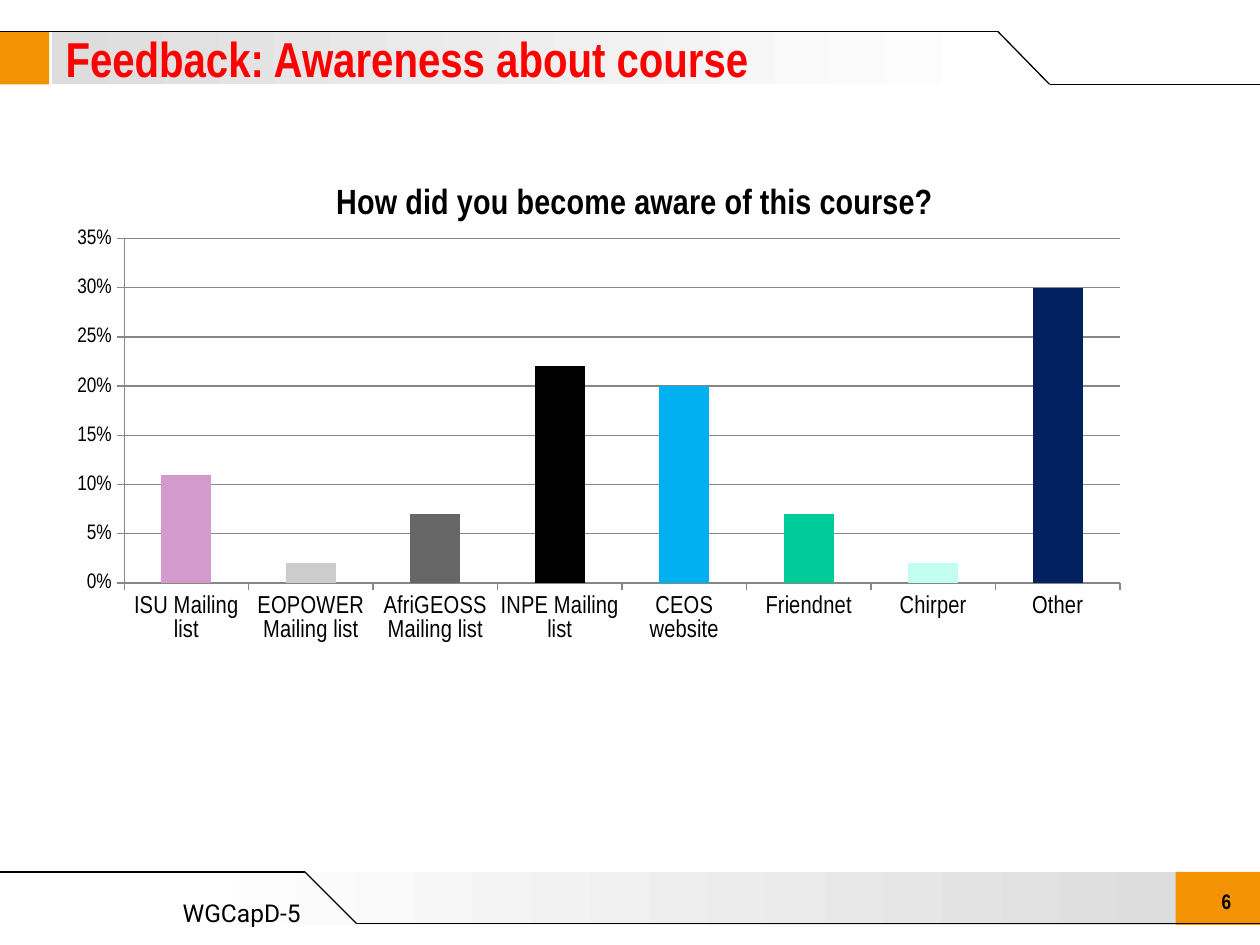
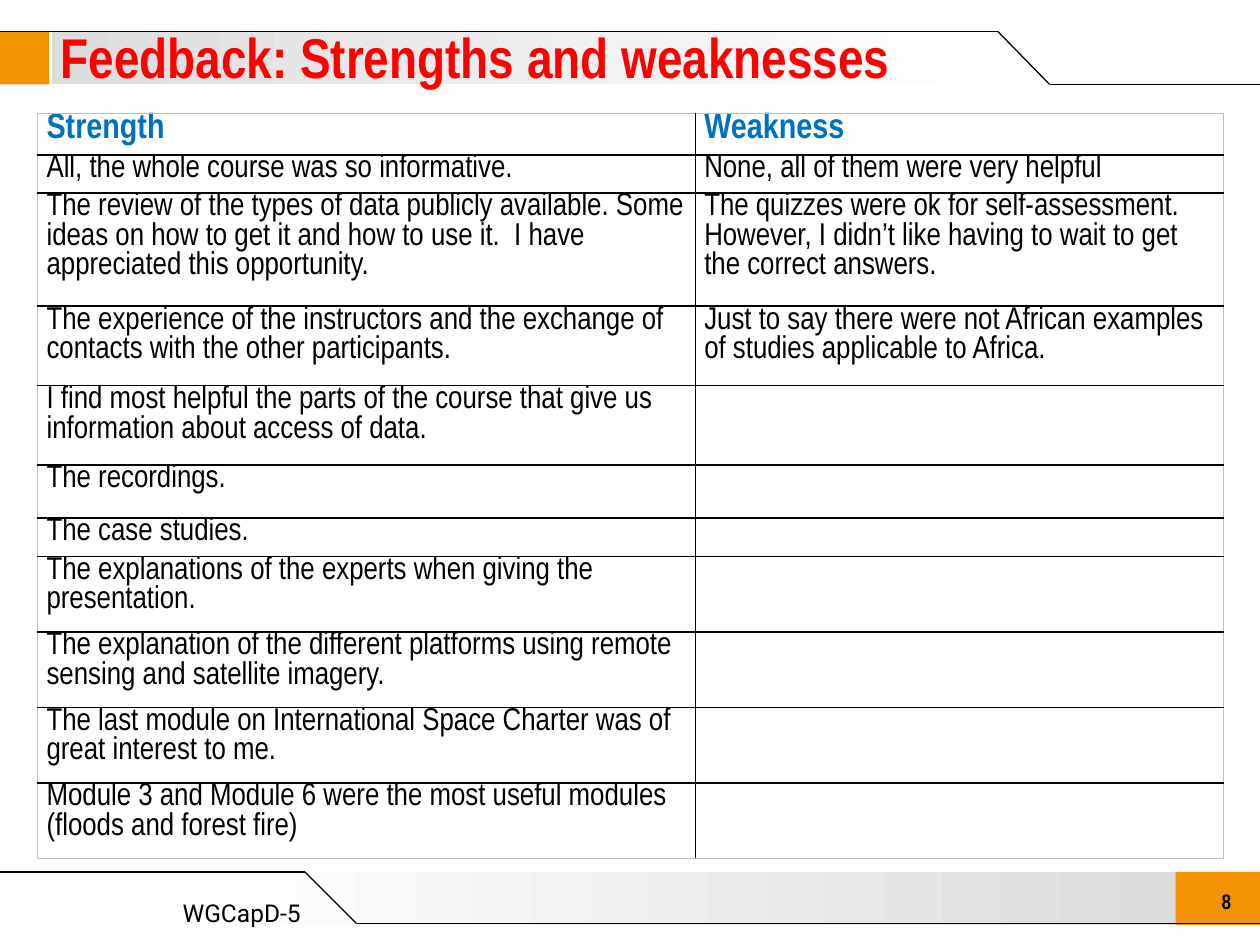
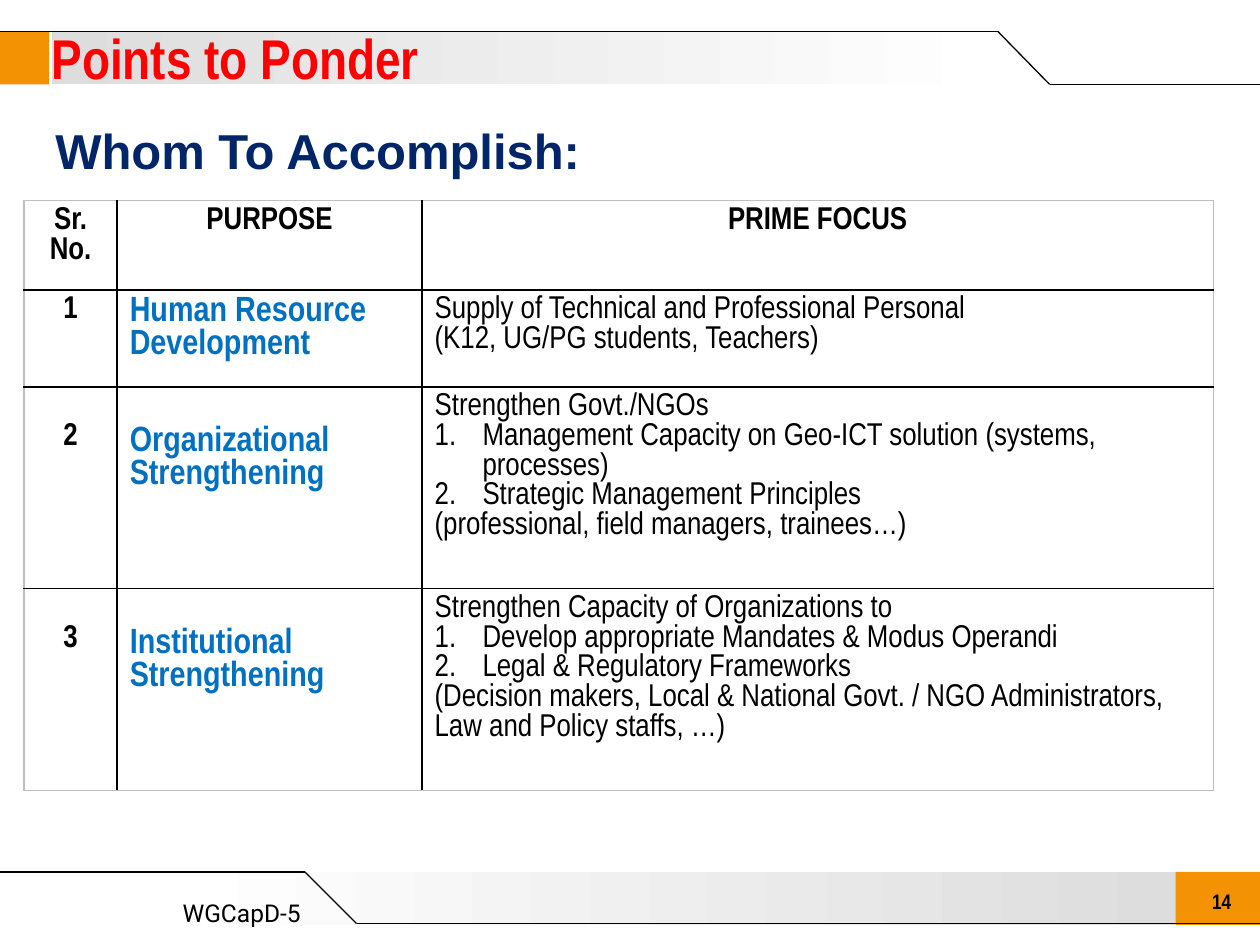
from pptx import Presentation
from pptx.chart.data import CategoryChartData
from pptx.dml.color import RGBColor
from pptx.enum.chart import XL_CHART_TYPE, XL_TICK_MARK
from pptx.enum.shapes import MSO_CONNECTOR, MSO_SHAPE
from pptx.enum.text import MSO_ANCHOR, MSO_AUTO_SIZE, PP_ALIGN
from pptx.oxml import parse_xml
from pptx.oxml.ns import nsdecls, qn
from pptx.oxml.xmlchemy import OxmlElement
from pptx.util import Inches, Pt

BLACK = RGBColor(0x00, 0x00, 0x00)
WHITE = RGBColor(0xFF, 0xFF, 0xFF)
SILVER = RGBColor(0xDD, 0xDD, 0xDD)
GRID_GRAY = RGBColor(0x87, 0x87, 0x87)
EDGE_GRAY = RGBColor(0xBF, 0xBF, 0xBF)
ORANGE = RGBColor(0xF3, 0x92, 0x03)
RED = RGBColor(0xFF, 0x00, 0x00)
BLUE = RGBColor(0x00, 0x70, 0xC0)
NAVY = RGBColor(0x00, 0x25, 0x69)
NARROW = "Arial Narrow"

WIDTH, HEIGHT = 10, 7.5
BAND_HEIGHT = 0.42
HEADER_TOP, HEADER_BOTTOM = 0.25, 0.67
FOOTER_TOP, FOOTER_BOTTOM = 6.92, 7.33


def write(frame, text, size=18, color=BLACK, bold=False, font=NARROW,
          align=PP_ALIGN.LEFT, anchor=MSO_ANCHOR.TOP, inset=0.05, numbered=()):
    frame.word_wrap = True
    frame.vertical_anchor = anchor
    frame.margin_left = frame.margin_right = Inches(inset)
    frame.margin_top = frame.margin_bottom = Inches(0.05)
    for index, line in enumerate(text.split("\n")):
        para = frame.add_paragraph() if index else frame.paragraphs[0]
        para.alignment = align
        if index in numbered:
            properties = para._p.get_or_add_pPr()
            properties.set("marL", str(Inches(0.38)))
            properties.set("indent", str(-Inches(0.38)))
            bullet = OxmlElement("a:buAutoNum")
            bullet.set("type", "arabicPeriod")
            properties.append(bullet)
        span = para.add_run()
        span.text = line
        span.font.name = font
        span.font.size = Pt(size)
        span.font.bold = bold
        span.font.color.rgb = color


def add_grid(page, left, top, columns, rows):
    table = page.shapes.add_table(
        len(rows), len(columns), Inches(left), Inches(top),
        Inches(sum(columns)), Inches(sum(rows))).table
    table.first_row = table.horz_banding = False
    for column, width in zip(table.columns, columns):
        column.width = Inches(width)
    for row, height in zip(table.rows, rows):
        row.height = Inches(height)
    for r in range(len(rows)):
        for c in range(len(columns)):
            cell = table.cell(r, c)
            cell.fill.background()
            cell.margin_top = cell.margin_bottom = 0
            sides = [("L", c == 0), ("R", c == len(columns) - 1),
                     ("T", r == 0), ("B", r == len(rows) - 1)]
            for position, (side, outer) in enumerate(sides):
                color, points = (EDGE_GRAY, 0.75) if outer else (BLACK, 1)
                cell._tc.get_or_add_tcPr().insert(position, parse_xml(
                    f'<a:ln{side} {nsdecls("a")} w="{Pt(points)}"><a:solidFill>'
                    f'<a:srgbClr val="{color}"/></a:solidFill></a:ln{side}>'))
    return table


deck = Presentation()
deck.slide_width, deck.slide_height = Inches(WIDTH), Inches(HEIGHT)

titles = [
    ("Feedback: Awareness about course", 28, 6, (0.47, 0.17, 7.47, 0.57)),
    ("Feedback: Strengths and weaknesses", 32, 8, (0.43, 0.12, 6.91, 0.64)),
    ("Points to Ponder", 32, 14, (0.36, 0.13, 6.32, 0.64)),
]
bands = [
    (1.42, FOOTER_TOP, 7.92, (WHITE, SILVER)),
    (9.33, FOOTER_TOP, 0.67, (ORANGE,)),
    (0.41, HEADER_TOP, 7.51, (SILVER, WHITE)),
    (0, HEADER_TOP, 0.39, (ORANGE,)),
]
outlines = [
    [(0, HEADER_TOP), (7.92, HEADER_TOP), (8.33, HEADER_BOTTOM), (WIDTH, HEADER_BOTTOM)],
    [(0, FOOTER_TOP), (2.42, FOOTER_TOP), (2.83, FOOTER_BOTTOM), (WIDTH, FOOTER_BOTTOM)],
]
pages = []
for title_text, title_size, number, title_place in titles:
    page = deck.slides.add_slide(deck.slide_layouts[5])
    pages.append(page)
    for left, top, width, colors in bands:
        band = page.shapes.add_shape(MSO_SHAPE.RECTANGLE, Inches(left), Inches(top),
                                     Inches(width), Inches(BAND_HEIGHT))
        band.shadow.inherit = False
        band.line.fill.background()
        if len(colors) == 1:
            band.fill.solid()
            band.fill.fore_color.rgb = colors[0]
        else:
            band.fill.gradient()
            band.fill.gradient_angle = 0
            for stop, color in zip(band.fill.gradient_stops, colors):
                stop.color.rgb = color
    for points in outlines:
        for start, end in zip(points, points[1:]):
            line = page.shapes.add_connector(
                MSO_CONNECTOR.STRAIGHT, *[Inches(value) for value in start + end])
            line.line.color.rgb = BLACK
            line.line.width = Pt(0.75)
            line._element.spPr.append(OxmlElement("a:effectLst"))
    box = page.shapes.add_textbox(Inches(9.42), Inches(7), Inches(0.45), Inches(0.3))
    write(box.text_frame, str(number), size=12, bold=True, align=PP_ALIGN.RIGHT,
          anchor=MSO_ANCHOR.BOTTOM, inset=0.1)
    box = page.shapes.add_textbox(Inches(1.35), Inches(7.08), Inches(1.48), Inches(0.34))
    write(box.text_frame, "WGCapD-5", size=14, font="Roboto", inset=0.1)
    title = page.shapes.title
    title.left, title.top, title.width, title.height = [Inches(v) for v in title_place]
    title.text_frame.auto_size = MSO_AUTO_SIZE.NONE
    write(title.text_frame, title_text, size=title_size, color=RED, bold=True,
          anchor=MSO_ANCHOR.BOTTOM)
    page.shapes._spTree.append(title._element)

awareness_page, feedback_page, focus_page = pages

sources = [
    ("ISU Mailing list", 0.11, RGBColor(0xD4, 0x9A, 0xCD)),
    ("EOPOWER Mailing list", 0.02, RGBColor(0xCC, 0xCC, 0xCC)),
    ("AfriGEOSS Mailing list", 0.07, RGBColor(0x66, 0x66, 0x66)),
    ("INPE Mailing list", 0.22, BLACK),
    ("CEOS website", 0.2, RGBColor(0x00, 0xB0, 0xF0)),
    ("Friendnet", 0.07, RGBColor(0x00, 0xCC, 0x99)),
    ("Chirper", 0.02, RGBColor(0xC2, 0xFF, 0xF0)),
    ("Other", 0.3, RGBColor(0x00, 0x20, 0x60)),
]
data = CategoryChartData(number_format="0%")
data.categories = [name for name, share, color in sources]
data.add_series("Series 1", [share for name, share, color in sources])
chart = awareness_page.shapes.add_chart(
    XL_CHART_TYPE.COLUMN_CLUSTERED, Inches(0.47), Inches(1.17),
    Inches(8.59), Inches(4.02), data).chart
chart.has_legend = False
chart.font.name, chart.font.size = NARROW, Pt(12)
chart.font.color.rgb = BLACK
write(chart.chart_title.text_frame, "How did you become aware of this course?",
      size=20, bold=True, align=PP_ALIGN.CENTER)
chart.chart_title.include_in_layout = True
plot = chart.plots[0]
plot.gap_width = 150
plot.vary_by_categories = False
for index, (name, share, color) in enumerate(sources):
    fill = plot.series[0].points[index].format.fill
    fill.solid()
    fill.fore_color.rgb = color
shares = chart.value_axis
shares.minimum_scale, shares.maximum_scale, shares.major_unit = 0, 0.35, 0.05
shares.tick_labels.number_format = "0%"
shares.tick_labels.number_format_is_linked = False
chart.category_axis.tick_labels.font.size = Pt(14)
for axis in (shares, chart.category_axis):
    axis.major_tick_mark = XL_TICK_MARK.OUTSIDE
    axis.format.line.color.rgb = GRID_GRAY
shares.major_gridlines.format.line.color.rgb = GRID_GRAY

placements = [
    (chart._chartSpace.chart.plotArea, 0, "inner", dict(x=0.06, y=0.18, w=0.92, h=0.68)),
    (chart.chart_title._element, 1, None, dict(x=0.25, y=0.06)),
]
for owner, position, target, place in placements:
    for old in owner.findall(qn("c:layout")):
        owner.remove(old)
    settings = [("layoutTarget", target)] if target else []
    settings += [(f"{key}Mode", "edge") for key in place if key in "xy"]
    settings += list(place.items())
    marks = "".join(f'<c:{key} val="{value}"/>' for key, value in settings)
    owner.insert(position, parse_xml(
        f'<c:layout {nsdecls("c")}><c:manualLayout>{marks}</c:manualLayout></c:layout>'))

comments = [
    ("Strength", "Weakness"),
    ("All, the whole course was so informative.", "None, all of them were very helpful"),
    ("The review of the types of data publicly available. Some ideas on how to get it "
     "and how to use it.  I have appreciated this opportunity.",
     "The quizzes were ok for self-assessment. However, I didn’t like having to wait "
     "to get the correct answers."),
    ("The experience of the instructors and the exchange of contacts with the other "
     "participants.",
     "Just to say there were not African examples of studies applicable to Africa."),
    ("I find most helpful the parts of the course that give us information about "
     "access of data.",),
    ("The recordings.",),
    ("The case studies.",),
    ("The explanations of the experts when giving the presentation.",),
    ("The explanation of the different platforms using remote sensing and satellite "
     "imagery.",),
    ("The last module on International Space Charter was of great interest to me.",),
    ("Module 3 and Module 6 were the most useful modules (floods and forest fire)",),
]
table = add_grid(feedback_page, 0.3, 0.9, [5.22, 4.19],
                 [0.33, 0.3, 0.9, 0.63, 0.63, 0.42, 0.3] + [0.6] * 4)
for r, row in enumerate(comments):
    for c, text in enumerate(row):
        cell = table.cell(r, c)
        heading = dict(size=20, color=BLUE, bold=True) if r == 0 else {}
        write(cell.text_frame, text, **heading)
        cell.margin_left = cell.margin_right = Inches(0.07)
        cell.margin_top = cell.margin_bottom = 0

box = focus_page.shapes.add_textbox(0, Inches(0.79), Inches(WIDTH), Inches(1.56))
write(box.text_frame, "Whom To Accomplish:", size=28, color=NAVY, bold=True,
      font="Arial", inset=0.44)
box.text_frame.margin_top = Inches(0.1)
box.text_frame.paragraphs[0].line_spacing = 1.14

purposes = [
    ("Sr. No.", "PURPOSE", "PRIME FOCUS"),
    ("1", "Human Resource Development",
     "Supply of Technical and Professional Personal\n(K12, UG/PG students, Teachers)"),
    ("2", "Organizational Strengthening",
     "Strengthen Govt./NGOs\n"
     "Management Capacity on Geo-ICT solution (systems, processes)\n"
     "Strategic Management Principles\n"
     "(professional, field managers, trainees…)"),
    ("3", "Institutional Strengthening",
     "Strengthen Capacity of Organizations to\n"
     "Develop appropriate Mandates & Modus Operandi\n"
     "Legal & Regulatory Frameworks\n"
     "(Decision makers, Local & National Govt. / NGO Administrators, "
     "Law and Policy staffs, …)"),
]
table = add_grid(focus_page, 0.19, 1.59, [0.74, 2.42, 6.28], [0.71, 0.77, 1.6, 1.6])
for r, row in enumerate(purposes):
    for c, text in enumerate(row):
        cell = table.cell(r, c)
        purpose = r > 0 and c == 1
        size = 20 if purpose else 18
        lowered = r > 1 and c < 2
        write(cell.text_frame, text, size=size, color=BLUE if purpose else BLACK,
              bold=r == 0 or c < 2,
              align=PP_ALIGN.CENTER if r == 0 or c == 0 else PP_ALIGN.LEFT,
              numbered=(1, 2) if r > 1 and c == 2 else ())
        cell.margin_left = cell.margin_right = Inches(0.1)
        cell.margin_top = Inches(0.05 + size * 0.013 * lowered)
        cell.margin_bottom = Inches(0.05)

deck.save("out.pptx")
